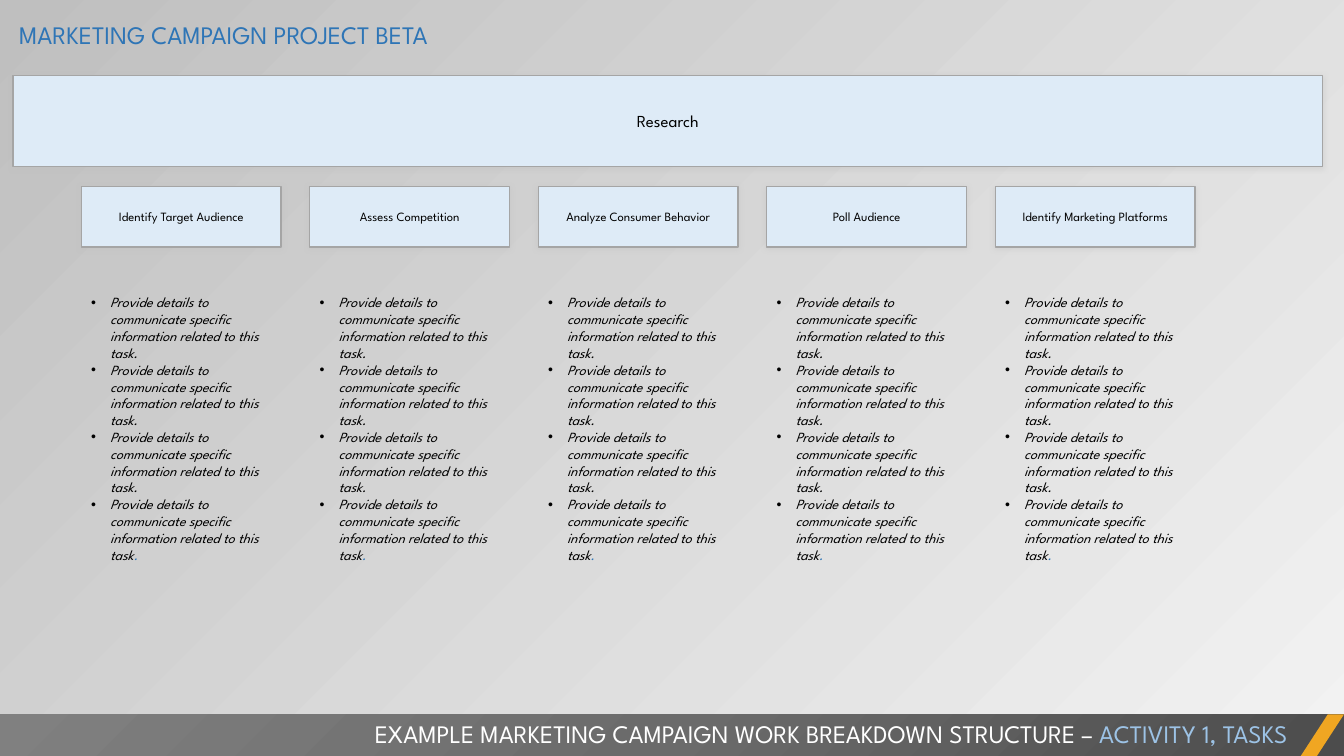
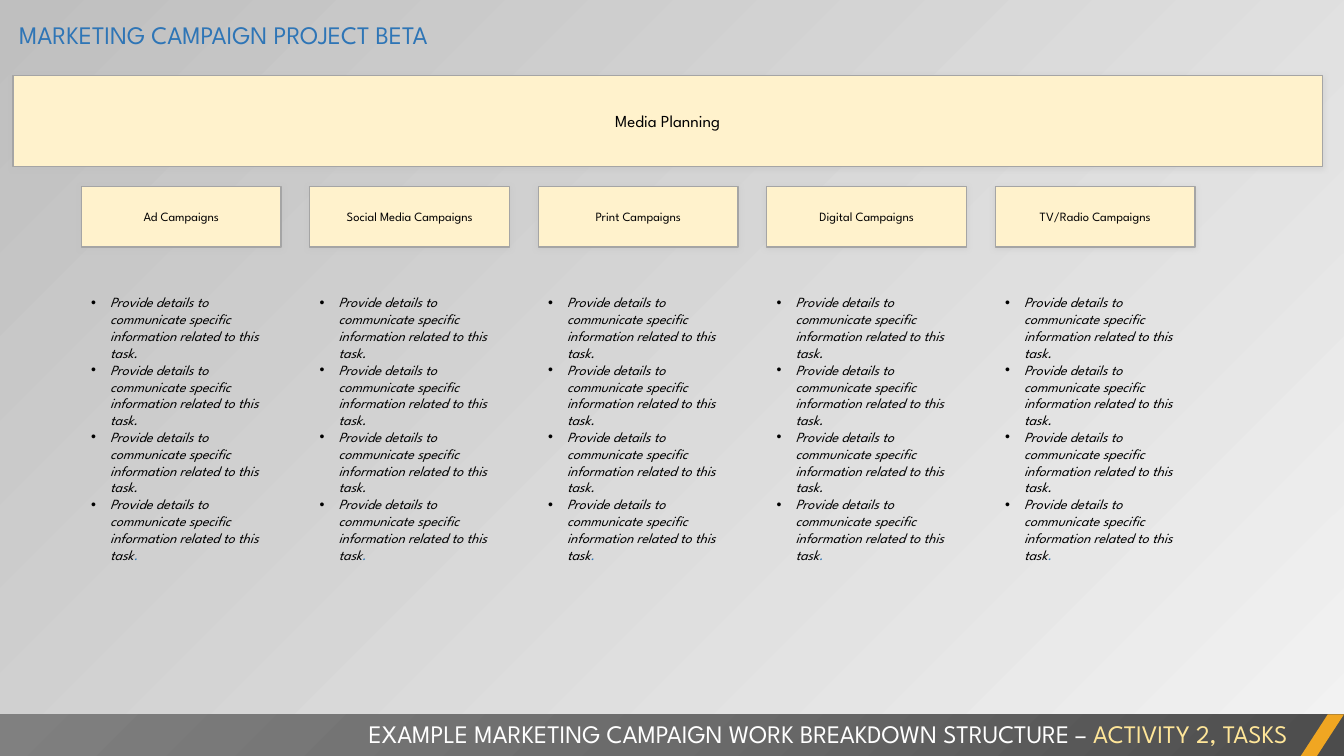
from lxml import etree
from pptx import Presentation
from pptx.dml.color import RGBColor
from pptx.enum.shapes import MSO_SHAPE
from pptx.enum.text import MSO_ANCHOR, MSO_AUTO_SIZE, PP_ALIGN
from pptx.oxml import parse_xml
from pptx.oxml.ns import nsdecls, qn
from pptx.util import Inches, Pt

RECTANGLE = MSO_SHAPE.RECTANGLE
PARALLELOGRAM = MSO_SHAPE.PARALLELOGRAM
TOP, MIDDLE = MSO_ANCHOR.TOP, MSO_ANCHOR.MIDDLE
GROW = MSO_AUTO_SIZE.SHAPE_TO_FIT_TEXT
LEFT, CENTER, RIGHT = PP_ALIGN.LEFT, PP_ALIGN.CENTER, PP_ALIGN.RIGHT

FONT = "League Spartan"
COLORS = {
    "ink": "000000",
    "white": "FFFFFF",
    "title": "2E75B6",
    "border": "A5A5A5",
    "shadow": "BFBFBF",
    "accent": "F0A622",
    "research": "DEEBF7",
    "research_label": "9DC3E6",
    "media": "FFF2CC",
    "media_label": "FFE699",
}
BACKDROP_STOPS = [(0, "F2F2F2", 40), (100, "BFBFBF", 100)]
FOOTER_STOPS = [(0, "4C4C4C", 100), (50, "6B6B6B", 100), (100, "808080", 100)]
DIAGONAL = '<a:lin ang="13500000" scaled="1"/>'
FROM_CORNER = '<a:path path="circle"><a:fillToRect l="100000" t="100000"/></a:path>'

GRID_COLUMNS, GRID_ROWS = 400, 225
FIRST_TASK, TASK_PITCH, TASK_WIDTH = 24.2, 68, 59.5
BULLET_INDENT = 5.63

PROJECT = "MARKETING CAMPAIGN PROJECT BETA"
FOOTER = "EXAMPLE MARKETING CAMPAIGN WORK BREAKDOWN STRUCTURE – "
DETAIL = "Provide details to communicate specific information related to this task"
DETAIL_COUNT = 4

ACTIVITIES = [
    ("Research", "research", "ACTIVITY 1, TASKS",
     ["Identify Target Audience", "Assess Competition", "Analyze Consumer Behavior",
      "Poll Audience", "Identify Marketing Platforms"]),
    ("Media Planning", "media", "ACTIVITY 2, TASKS",
     ["Ad Campaigns", "Social Media Campaigns", "Print Campaigns",
      "Digital Campaigns", "TV/Radio Campaigns"]),
]


class Deck:
    def __init__(self):
        self.prs = Presentation()
        self.prs.slide_width = Inches(13.333)
        self.prs.slide_height = Inches(7.5)
        self.layout = self.prs.slide_layouts[5]
        self.slide = None
        master = self.prs.slide_master
        master.background.fill.solid()
        self.gradient(master.element.cSld.find(qn("p:bg")), BACKDROP_STOPS, DIAGONAL)

    def x(self, columns):
        return round(self.prs.slide_width * columns / GRID_COLUMNS)

    def y(self, rows):
        return round(self.prs.slide_height * rows / GRID_ROWS)

    def area(self, left, top, width, height):
        return self.x(left), self.y(top), self.x(width), self.y(height)

    def gradient(self, owner, stops, direction):
        marks = "".join(
            f'<a:gs pos="{place * 1000}"><a:srgbClr val="{color}">'
            f'<a:alpha val="{opacity * 1000}"/></a:srgbClr></a:gs>'
            for place, color, opacity in stops)
        solid = next(owner.iter(qn("a:solidFill")))
        solid.getparent().replace(solid, parse_xml(
            f'<a:gradFill {nsdecls("a")} rotWithShape="1">'
            f'<a:gsLst>{marks}</a:gsLst>{direction}</a:gradFill>'))

    def style(self, paragraph, size, colors, align=LEFT, italic=False):
        paragraph.alignment = align
        for run, color in zip(paragraph.runs, colors):
            run.font.name = FONT
            run.font.size = Pt(size)
            run.font.italic = italic
            run.font.color.rgb = RGBColor.from_string(COLORS[color])

    def fit(self, frame):
        frame.word_wrap = True
        frame.auto_size = GROW
        frame.vertical_anchor = TOP

    def text_box(self, *cells):
        frame = self.slide.shapes.add_textbox(*self.area(*cells)).text_frame
        self.fit(frame)
        return frame

    def plain_shape(self, preset, cells, color):
        shape = self.slide.shapes.add_shape(preset, *self.area(*cells))
        shape.shadow.inherit = False
        shape.fill.solid()
        shape.fill.fore_color.rgb = RGBColor.from_string(COLORS[color])
        shape.line.fill.background()
        return shape

    def new_slide(self):
        self.slide = self.prs.slides.add_slide(self.layout)

    def title(self, text):
        title = self.slide.shapes.title
        title.left, title.top, title.width, title.height = self.area(2.7, 4.2, 303.3, 12)
        title.text_frame.text = text
        self.fit(title.text_frame)
        self.style(title.text_frame.paragraphs[0], 18, ["title"])

    def card(self, text, cells, color, size):
        card = self.plain_shape(RECTANGLE, cells, color)
        card.line.color.rgb = RGBColor.from_string(COLORS["border"])
        card.line.width = Pt(1)
        effects = card.element.spPr.find(qn("a:effectLst"))
        shadow = etree.SubElement(effects, qn("a:outerShdw"), blurRad=str(Pt(4)),
                                  dist=str(Pt(1)), dir="5400000", algn="t", rotWithShape="0")
        tint = etree.SubElement(shadow, qn("a:srgbClr"), val=COLORS["shadow"])
        etree.SubElement(tint, qn("a:alpha"), val="40000")
        card.text_frame.text = text
        card.text_frame.vertical_anchor = MIDDLE
        self.style(card.text_frame.paragraphs[0], size, ["ink"], CENTER)

    def details(self, left):
        frame = self.text_box(left, 86, TASK_WIDTH, 90)
        endings = ["."] * (DETAIL_COUNT - 1) + [""]
        frame.text = "\n".join(DETAIL + ending for ending in endings)
        frame.paragraphs[-1].add_run().text = "."
        indent = self.x(BULLET_INDENT)
        for paragraph in frame.paragraphs:
            self.style(paragraph, 10, ["ink", "title"], italic=True)
            properties = paragraph._p.get_or_add_pPr()
            properties.set("marL", str(indent))
            properties.set("indent", str(-indent))
            etree.SubElement(properties, qn("a:buFont"), typeface="Arial")
            etree.SubElement(properties, qn("a:buChar"), char="•")

    def footer(self, label, label_color):
        band = self.plain_shape(RECTANGLE, (0, 212.6, 400, 12.6), "ink")
        self.gradient(band.element.spPr, FOOTER_STOPS, FROM_CORNER)
        slash = self.plain_shape(PARALLELOGRAM, (387, 212.6, 13, 12.6), "accent")
        slash.adjustments[0] = 0.65
        caption = self.text_box(0, 212.4, 386.1, 12).paragraphs[0]
        caption.text = FOOTER
        caption.add_run().text = label
        self.style(caption, 18, ["white", label_color], RIGHT)


def main():
    deck = Deck()
    for activity, color, label, tasks in ACTIVITIES:
        deck.new_slide()
        deck.title(PROJECT)
        deck.card(activity, (3.9, 22.5, 389.7, 27), color, 12)
        for index, task in enumerate(tasks):
            left = FIRST_TASK + index * TASK_PITCH
            deck.card(task, (left, 55.5, TASK_WIDTH, 18), color, 9)
            deck.details(left)
        deck.footer(label, f"{color}_label")
    deck.prs.save("out.pptx")


if __name__ == "__main__":
    main()
